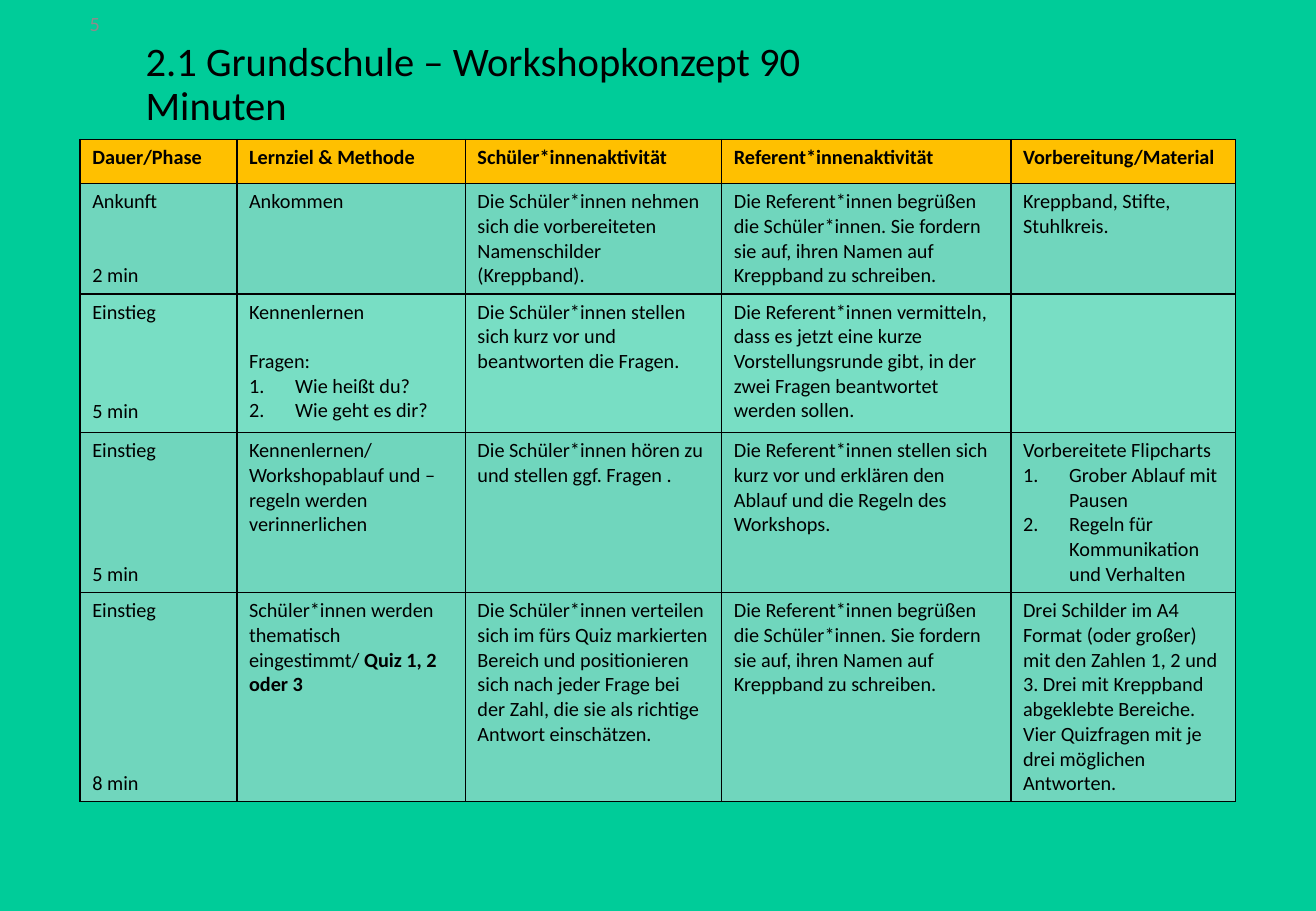
from dataclasses import dataclass

from lxml.etree import SubElement as Sub
from pptx import Presentation
from pptx.dml.color import RGBColor as Color
from pptx.enum.text import MSO_ANCHOR as Anchor, PP_ALIGN as Align
from pptx.oxml import parse_xml
from pptx.oxml.ns import nsdecls, qn
from pptx.util import Inches, Pt


@dataclass(frozen=True)
class Theme:
    font: str = "Calibri"
    back: str = "00CC99"
    ink: str = "000000"
    pale: str = "8C8C8C"
    head: str = "FFC000"
    dark: str = "E1E1E1"
    light: str = "F0F0F0"
    alpha: int = 50
    title: int = 24
    body: int = 12
    edge: int = 1
    line: float = 14.65
    inset: float = 0.38


@dataclass(frozen=True)
class Para:
    text: str = ""
    gap: int = 0
    bold: str = ""
    listed: bool = False


class Deck:
    unit = 0.1

    def __init__(self, theme, cols, rows):
        self.theme = theme
        self.show = Presentation()
        self.show.slide_width = self.grid(cols)
        self.show.slide_height = self.grid(rows)
        self.slide = self.show.slides.add_slide(self.show.slide_layouts[6])
        fill = self.slide.background.fill
        fill.solid()
        fill.fore_color.rgb = Color.from_string(theme.back)

    def grid(self, count):
        return Inches(count * self.unit)

    def run(self, para, text, size, color, bold=False):
        run = para.add_run()
        run.text = text
        font = run.font
        font.name = self.theme.font
        font.size = Pt(size)
        font.bold = bold
        font.color.rgb = Color.from_string(color)

    def label(self, text, spot, size, color, align=Align.LEFT, pitch=1.0):
        box = self.slide.shapes.add_textbox(*map(self.grid, spot))
        frame = box.text_frame
        frame.word_wrap = True
        frame.vertical_anchor = Anchor.MIDDLE
        para = frame.paragraphs[0]
        para.alignment = align
        para.line_spacing = pitch
        self.run(para, text, size, color)

    def prose(self, frame, paras, bold):
        for i, item in enumerate(paras):
            para = frame.add_paragraph() if i else frame.paragraphs[0]
            if item.gap:
                para.space_before = Pt(item.gap * self.theme.line)
            if item.listed:
                props = para._p.get_or_add_pPr()
                inset = Inches(self.theme.inset)
                props.set("marL", str(inset))
                props.set("indent", str(-inset))
                Sub(props, qn("a:buAutoNum"), type="arabicPeriod")
            for text, strong in ((item.text, bold), (item.bold, True)):
                if text:
                    self.run(para, text, self.theme.body, self.theme.ink, strong)

    def paint(self, cell, color, alpha=100):
        cell.fill.solid()
        cell.fill.fore_color.rgb = Color.from_string(color)
        props = cell._tc.get_or_add_tcPr()
        if alpha < 100:
            tint = props.find(f".//{qn('a:srgbClr')}")
            Sub(tint, qn("a:alpha"), val=str(alpha * 1000))
        for i, side in enumerate("LRTB"):
            props.insert(i, parse_xml(
                f'<a:ln{side} {nsdecls("a")} w="{Pt(self.theme.edge)}"><a:solidFill>'
                f'<a:srgbClr val="{self.theme.ink}"/></a:solidFill></a:ln{side}>'))

    def table(self, left, top, cols, rows, data, fills):
        spot = map(self.grid, (left, top, sum(cols), sum(rows)))
        table = self.slide.shapes.add_table(len(rows), len(cols), *spot).table
        table.first_row = table.horz_banding = False
        for col, wide in zip(table.columns, cols):
            col.width = self.grid(wide)
        for i, (row, high) in enumerate(zip(table.rows, rows)):
            row.height = self.grid(high)
            for cell, paras in zip(row.cells, data[i]):
                self.prose(cell.text_frame, paras, bold=not i)
                self.paint(cell, fills[i], self.theme.alpha if i else 100)

    def save(self):
        self.show.save("out.pptx")


def phase(name, time, gap):
    return [Para(name), Para(time, gap=gap)]


GREET = [Para("Die Referent*innen begrüßen die Schüler*innen. Sie fordern "
              "sie auf, ihren Namen auf Kreppband zu schreiben.")]

HEADS = ("Dauer/Phase", "Lernziel & Methode", "Schüler*innenaktivität",
         "Referent*innenaktivität", "Vorbereitung/Material")

PLAN = [
    [[Para(head)] for head in HEADS],
    [
        phase("Ankunft", "2 min", 2),
        [Para("Ankommen")],
        [Para("Die Schüler*innen nehmen sich die vorbereiteten "
              "Namenschilder (Kreppband).")],
        GREET,
        [Para("Kreppband, Stifte, Stuhlkreis.")],
    ],
    [
        phase("Einstieg", "5 min", 3),
        [Para("Kennenlernen"), Para("Fragen:", gap=1),
         Para("Wie heißt du?", listed=True),
         Para("Wie geht es dir?", listed=True)],
        [Para("Die Schüler*innen stellen sich kurz vor und beantworten "
              "die Fragen.")],
        [Para("Die Referent*innen vermitteln, dass es jetzt eine kurze "
              "Vorstellungsrunde gibt, in der zwei Fragen beantwortet "
              "werden sollen.")],
        [],
    ],
    [
        phase("Einstieg", "5 min", 4),
        [Para("Kennenlernen/"),
         Para("Workshopablauf und –regeln werden verinnerlichen")],
        [Para("Die Schüler*innen hören zu und stellen ggf. Fragen .")],
        [Para("Die Referent*innen stellen sich kurz vor und erklären den "
              "Ablauf und die Regeln des Workshops.")],
        [Para("Vorbereitete Flipcharts"),
         Para("Grober Ablauf mit Pausen", listed=True),
         Para("Regeln für Kommunikation und Verhalten", listed=True)],
    ],
    [
        phase("Einstieg", "8 min", 6),
        [Para("Schüler*innen werden thematisch eingestimmt/ ",
              bold="Quiz 1, 2 oder 3")],
        [Para("Die Schüler*innen verteilen sich im fürs Quiz markierten "
              "Bereich und positionieren sich nach jeder Frage bei der Zahl, "
              "die sie als richtige Antwort einschätzen.")],
        GREET,
        [Para("Drei Schilder im A4 Format (oder großer) mit den Zahlen 1, 2 "
              "und 3. Drei mit Kreppband abgeklebte Bereiche."),
         Para("Vier Quizfragen mit je drei möglichen Antworten.")],
    ],
]


def main():
    look = Theme()
    deck = Deck(look, 108.3, 75)
    deck.label("2.1 Grundschule – Workshopkonzept 90 Minuten",
               (11, 3.6, 67.8, 6.8), look.title, look.ink, pitch=0.9)
    deck.table(6.6, 11.5, (12.9, 18.8, 21.1, 23.8, 18.5),
               (3.6, 9.1, 11.4, 13.2, 17.2), PLAN,
               (look.head, look.dark, look.light, look.dark, look.dark))
    deck.label("5", (-4.4, -0.1, 24.4, 4), look.body, look.pale, Align.CENTER)
    deck.save()


if __name__ == "__main__":
    main()
